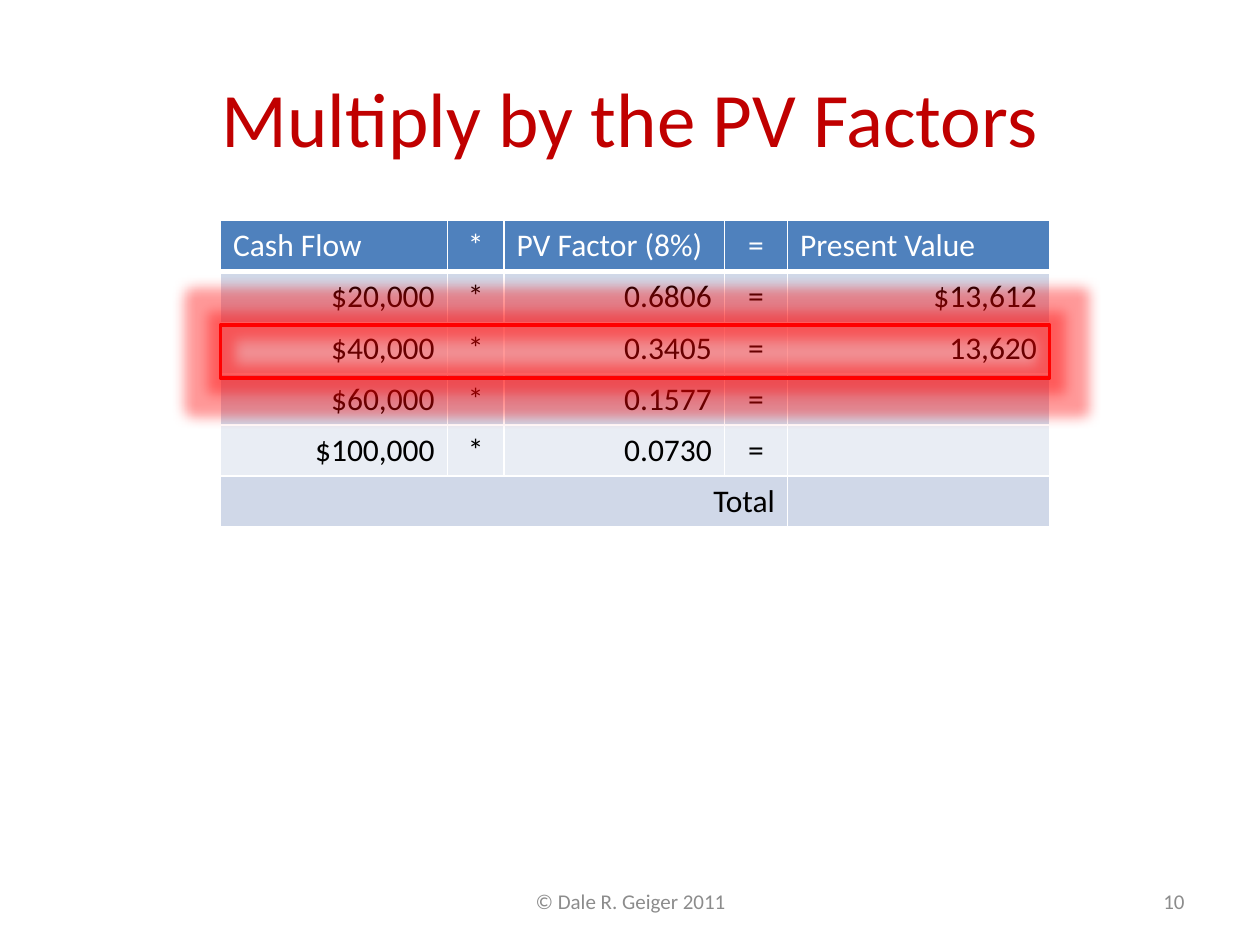
from typing import NamedTuple

from lxml.etree import SubElement
from pptx import Presentation
from pptx.dml.color import RGBColor
from pptx.enum.shapes import MSO_SHAPE as Shape
from pptx.enum.text import MSO_ANCHOR as Anchor, PP_ALIGN as Align
from pptx.oxml import parse_xml
from pptx.oxml.ns import nsdecls, qn
from pptx.util import Inches, Pt

FONT = "Calibri"
DARK_RED = RGBColor(0xC0, 0x00, 0x00)
RED = RGBColor(0xFF, 0x00, 0x00)
GRAY = RGBColor(0x8C, 0x8C, 0x8C)
BLACK = RGBColor(0x00, 0x00, 0x00)
WHITE = RGBColor(0xFF, 0xFF, 0xFF)
HEADER_BLUE = RGBColor(0x4F, 0x81, 0xBD)
BANDS = (RGBColor(0xD0, 0xD8, 0xE8), RGBColor(0xE9, 0xED, 0xF4))

TABLE_LEFT, TABLE_TOP, ROW_HEIGHT = 1.75, 1.75, 0.405
GLOW_RADIUS = Pt(14)


class Column(NamedTuple):
    heading: str
    width: float
    heading_align: Align
    align: Align


class Footer(NamedTuple):
    text: str
    left: float
    width: float
    align: Align


COLUMNS = (
    Column("Cash Flow", 1.8, Align.LEFT, Align.RIGHT),
    Column("*", 0.45, Align.CENTER, Align.CENTER),
    Column("PV Factor (8%)", 1.75, Align.LEFT, Align.RIGHT),
    Column("=", 0.5, Align.CENTER, Align.CENTER),
    Column("Present Value", 2.08, Align.LEFT, Align.RIGHT),
)
TABLE_WIDTH = sum(column.width for column in COLUMNS)
CASH_FLOWS = (
    ("$20,000", "0.6806", "$13,612"),
    ("$40,000", "0.3405", "13,620"),
    ("$60,000", "0.1577", ""),
    ("$100,000", "0.0730", ""),
)
FOOTERS = (
    Footer("© Dale R. Geiger 2011", 3.42, 3.17, Align.CENTER),
    Footer("10", 7.17, 2.33, Align.RIGHT),
)


def write(frame, text: str, size: int, color: RGBColor, align: Align) -> None:
    para = frame.paragraphs[0]
    para.alignment = align
    span = para.add_run()
    span.text = text
    span.font.name = FONT
    span.font.size = Pt(size)
    span.font.bold = False
    span.font.color.rgb = color


def add_borders(cell, bottom: int) -> None:
    """Draw white cell borders, 1 pt except for the bottom one."""
    properties = cell._tc.get_or_add_tcPr()
    widths = {"lnL": 1, "lnR": 1, "lnT": 1, "lnB": bottom}
    for position, (side, width) in enumerate(widths.items()):
        line = parse_xml(
            f'<a:{side} {nsdecls("a")} w="{Pt(width)}"><a:solidFill>'
            f'<a:srgbClr val="{WHITE}"/></a:solidFill></a:{side}>'
        )
        properties.insert(position, line)


def style_cell(cell, text: str, row: int, align: Align) -> None:
    is_header = row == 0
    cell.fill.solid()
    cell.fill.fore_color.rgb = HEADER_BLUE if is_header else BANDS[(row - 1) % 2]
    add_borders(cell, bottom=3 if is_header else 1)
    if text:
        write(cell.text_frame, text, 18, WHITE if is_header else BLACK, align)


def add_present_value_table(page) -> None:
    rows = [tuple(column.heading for column in COLUMNS)]
    rows += [(cash, "*", factor, "=", value) for cash, factor, value in CASH_FLOWS]
    rows.append(("Total", "", "", "", ""))
    table = page.shapes.add_table(
        len(rows), len(COLUMNS), Inches(TABLE_LEFT), Inches(TABLE_TOP),
        Inches(TABLE_WIDTH), Inches(ROW_HEIGHT * len(rows)),
    ).table
    for index, column in enumerate(COLUMNS):
        table.columns[index].width = Inches(column.width)
    for row, values in enumerate(rows):
        table.rows[row].height = Inches(ROW_HEIGHT)
        for index, (column, text) in enumerate(zip(COLUMNS, values)):
            align = column.heading_align if row == 0 else column.align
            style_cell(table.cell(row, index), text, row, align)
    last = len(rows) - 1
    table.cell(last, 0).merge(table.cell(last, len(COLUMNS) - 2))


def add_row_highlight(page) -> None:
    """Frame the second cash flow with a glowing red outline."""
    frame = page.shapes.add_shape(
        Shape.RECTANGLE, Inches(TABLE_LEFT), Inches(2.58),
        Inches(TABLE_WIDTH), Inches(0.42),
    )
    frame.shadow.inherit = False
    frame.fill.background()
    frame.line.color.rgb = RED
    frame.line.width = Pt(2)
    effects = frame._element.spPr.find(qn("a:effectLst"))
    glow = SubElement(effects, qn("a:glow"), rad=str(GLOW_RADIUS))
    color = SubElement(glow, qn("a:srgbClr"), val=str(RED))
    SubElement(color, qn("a:alpha"), val="40000")


def add_footer(page, footer: Footer) -> None:
    box = page.shapes.add_textbox(
        Inches(footer.left), Inches(6.95), Inches(footer.width), Inches(0.4)
    )
    box.text_frame.word_wrap = True
    box.text_frame.vertical_anchor = Anchor.MIDDLE
    write(box.text_frame, footer.text, 12, GRAY, footer.align)


def main() -> None:
    deck = Presentation()
    deck.slide_width, deck.slide_height = Inches(10), Inches(7.5)
    page = deck.slides.add_slide(deck.slide_layouts[5])
    title = page.shapes.title
    title.left, title.top = Inches(0.5), Inches(0.3)
    title.width, title.height = Inches(9), Inches(1.25)
    title.text_frame.vertical_anchor = Anchor.MIDDLE
    write(title.text_frame, "Multiply by the PV Factors", 44, DARK_RED, Align.CENTER)
    add_present_value_table(page)
    for footer in FOOTERS:
        add_footer(page, footer)
    add_row_highlight(page)
    deck.save("out.pptx")


if __name__ == "__main__":
    main()
